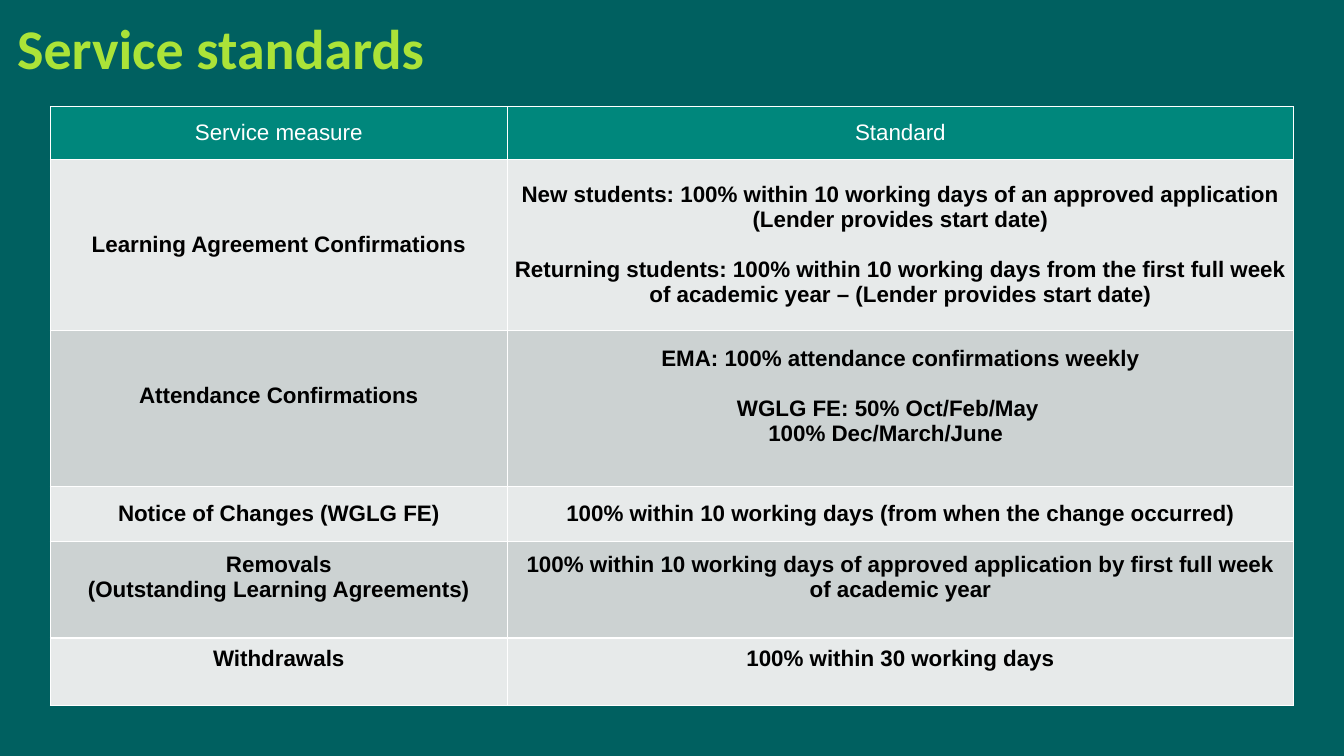
from dataclasses import dataclass

from lxml.etree import SubElement
from pptx import Presentation
from pptx.dml.color import RGBColor
from pptx.enum.text import MSO_ANCHOR, MSO_AUTO_SIZE, PP_ALIGN
from pptx.oxml.ns import qn
from pptx.util import Inches, Pt


@dataclass(frozen=True)
class Theme:
    backdrop: RGBColor = RGBColor.from_string("006060")
    title: RGBColor = RGBColor.from_string("ABE338")
    header: RGBColor = RGBColor.from_string("00877C")
    header_text: RGBColor = RGBColor.from_string("FFFFFF")
    bands: tuple = (RGBColor.from_string("E7EAEA"), RGBColor.from_string("CCD2D2"))
    body_text: RGBColor = RGBColor.from_string("000000")
    border: str = "FFFFFF"
    border_width: int = Pt(1)
    title_font: str = "Calibri"
    table_font: str = "Arial"
    title_size: int = Pt(40)
    table_size: int = Pt(16)
    paragraph_gap: int = Pt(18)


@dataclass(frozen=True)
class Line:
    text: str
    gap_before: bool = False
    indent: float = 0


@dataclass(frozen=True)
class Measure:
    height: float
    name: tuple
    standard: tuple
    lift: float = 0


THEME = Theme()
COLUMN_WIDTHS = (4.53, 7.8)
MEASURES = (
    Measure(0.52, (Line("Service measure"),), (Line("Standard"),)),
    Measure(1.7, (Line("Learning Agreement Confirmations"),), (
        Line("New students: 100% within 10 working days of an approved application "
             "(Lender provides start date)"),
        Line("Returning students: 100% within 10 working days from the first full week "
             "of academic year – (Lender provides start date)", gap_before=True),
    )),
    Measure(1.55, (Line("Attendance Confirmations"),), (
        Line("EMA: 100% attendance confirmations weekly"),
        Line("WGLG FE: 50% Oct/Feb/May", gap_before=True, indent=2.21),
        Line("100% Dec/March/June", indent=2.52),
        ), lift=0.25),
    Measure(0.54, (Line("Notice of Changes (WGLG FE)"),),
            (Line("100% within 10 working days (from when the change occurred)"),)),
    Measure(0.96, (Line("Removals"), Line("(Outstanding Learning Agreements)")),
            (Line("100% within 10 working days of approved application by first full week "
                  "of academic year"),), lift=0.25),
    Measure(0.67, (Line("Withdrawals"),), (Line("100% within 30 working days"),), lift=0.25),
)


def apply_format(target, values):
    for attribute, value in values.items():
        setattr(target, attribute, value)


def format_font(font, color, **values):
    apply_format(font, values)
    font.color.rgb = color


def add_title(slide, left, top, width, height):
    title = slide.shapes.title
    apply_format(title, {"left": left, "top": top, "width": width, "height": height})
    title.text = "Service standards"
    apply_format(title.text_frame, {
        "word_wrap": True, "auto_size": MSO_AUTO_SIZE.NONE,
        "vertical_anchor": MSO_ANCHOR.MIDDLE,
    })
    heading = title.text_frame.paragraphs[0]
    heading.alignment = PP_ALIGN.LEFT
    format_font(heading.font, THEME.title, name=THEME.title_font,
                size=THEME.title_size, bold=True)


def add_borders(cell):
    properties = cell._tc.get_or_add_tcPr()
    for side in ("lnL", "lnR", "lnT", "lnB"):
        border = SubElement(properties, qn(f"a:{side}"), w=str(THEME.border_width))
        fill = SubElement(border, qn("a:solidFill"))
        SubElement(fill, qn("a:srgbClr"), val=THEME.border)


def fill_cell(cell, lines, lift, fill_color, text_color, bold):
    add_borders(cell)
    cell.fill.solid()
    cell.fill.fore_color.rgb = fill_color
    apply_format(cell, {
        "vertical_anchor": MSO_ANCHOR.MIDDLE,
        "margin_left": Inches(0.07), "margin_right": Inches(0.07),
        "margin_top": Inches(0.04), "margin_bottom": Inches(0.04 + lift),
    })
    for index, line in enumerate(lines):
        frame = cell.text_frame
        paragraph = frame.add_paragraph() if index else frame.paragraphs[0]
        paragraph.text = line.text
        paragraph.alignment = PP_ALIGN.LEFT if line.indent else PP_ALIGN.CENTER
        if line.indent:
            paragraph._p.get_or_add_pPr().set("marL", str(Inches(line.indent)))
        if line.gap_before:
            paragraph.space_before = THEME.paragraph_gap
        format_font(paragraph.runs[0].font, text_color, name=THEME.table_font,
                    size=THEME.table_size, bold=bold)


def add_standards_table(slide, left, top, width, height):
    table = slide.shapes.add_table(
        len(MEASURES), len(COLUMN_WIDTHS), left, top, width, height).table
    apply_format(table, {"first_row": False, "horz_banding": False})
    for column, column_width in zip(table.columns, COLUMN_WIDTHS):
        column.width = Inches(column_width)
    for index, (row, measure) in enumerate(zip(table.rows, MEASURES)):
        row.height = Inches(measure.height)
        fill_color = THEME.bands[(index - 1) % 2] if index else THEME.header
        text_color = THEME.body_text if index else THEME.header_text
        for cell, lines in zip(row.cells, (measure.name, measure.standard)):
            fill_cell(cell, lines, measure.lift, fill_color, text_color, index > 0)


def build_slide(presentation):
    slide = presentation.slides.add_slide(presentation.slide_layouts[5])
    slide.background.fill.solid()
    slide.background.fill.fore_color.rgb = THEME.backdrop
    add_title(slide, Inches(0.07), Inches(0.08), Inches(7.51), Inches(0.77))
    add_standards_table(slide, Inches(0.5), Inches(1.06),
                        Inches(sum(COLUMN_WIDTHS)),
                        Inches(sum(measure.height for measure in MEASURES)))


def main():
    presentation = Presentation()
    apply_format(presentation, {"slide_width": Inches(13.33), "slide_height": Inches(7.5)})
    build_slide(presentation)
    presentation.save("out.pptx")


if __name__ == "__main__":
    main()
